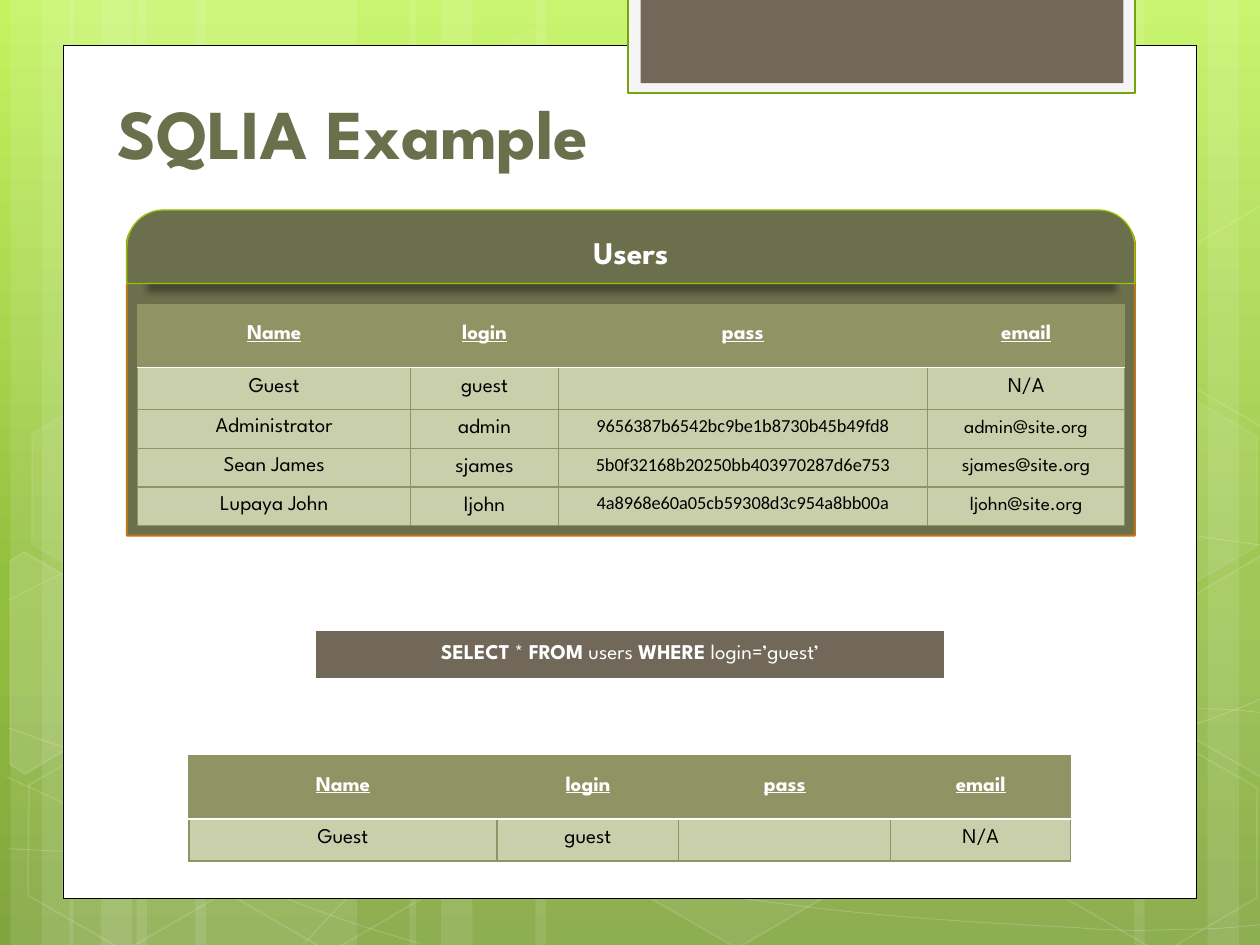
import math

import lxml.etree
import pptx
import pptx.dml.color
import pptx.enum.shapes
import pptx.enum.text
import pptx.oxml.ns
import pptx.util

Pt = pptx.util.Pt
qn = pptx.oxml.ns.qn
SHAPE = pptx.enum.shapes.MSO_SHAPE
ANCHOR = pptx.enum.text.MSO_ANCHOR
CENTER = pptx.enum.text.PP_ALIGN.CENTER

COLORS = {
    "white": "FFFFFF", "black": "000000", "olive": "6C6F4C", "sage": "909465",
    "pale": "C9CFAB", "brown": "71685A", "frame": "F5F5F5", "green": "74A510",
    "lime": "94C600", "orange": "BC7619",
}
BACKGROUND = [(0, "C3F35F"), (62, "93BF3F"), (100, "81A53E")]
FONT = "League Spartan"
HEAD = {"size": Pt(12), "bold": True, "underline": True}
BODY = {"size": Pt(12)}
HASH = {"size": Pt(10.5), "name": "Calibri"}
MAIL = {"size": Pt(11)}


def rgb(name):
    return pptx.dml.color.RGBColor.from_string(COLORS[name])


def sub(parent, tag, **attrs):
    return lxml.etree.SubElement(parent, qn(tag), {k: str(v) for k, v in attrs.items()})


def turn(points, center, degrees):
    cos, sin = math.cos(math.radians(degrees)), math.sin(math.radians(degrees))
    cx, cy = center
    return [(cx + (x - cx) * cos - (y - cy) * sin, cy + (x - cx) * sin + (y - cy) * cos)
            for x, y in points]


class Deck:
    def __init__(self, width, height):
        self.prs = pptx.Presentation()
        self.prs.slide_width, self.prs.slide_height = Pt(width), Pt(height)
        self.s = self.prs.slides.add_slide(self.prs.slide_layouts[5])

    def background(self, stops):
        fill = self.s.background.fill
        fill.gradient()
        fill.gradient_angle = 270
        gs_list = next(self.s.element.iter(qn("a:gsLst")))
        for gs in list(gs_list):
            gs_list.remove(gs)
        for pos, color in stops:
            sub(sub(gs_list, "a:gs", pos=pos * 1000), "a:srgbClr", val=color)

    def paint(self, sp, fill=None, alpha=100, line=None, width=1, line_alpha=100):
        sp.shadow.inherit = False
        if fill:
            sp.fill.solid()
            sp.fill.fore_color.rgb = rgb(fill)
        else:
            sp.fill.background()
        if line:
            sp.line.color.rgb = rgb(line)
            sp.line.width = Pt(width)
        else:
            sp.line.fill.background()
        solid = qn("a:solidFill")
        for where, value in ((solid, alpha), (qn("a:ln") + "/" + solid, line_alpha)):
            node = sp.element.spPr.find(where)
            if node is not None and value < 100:
                sub(node[0], "a:alpha", val=value * 1000)
        return sp

    def shape(self, kind, x, y, w, h, adj=(), rotation=0, **look):
        sp = self.s.shapes.add_shape(kind, Pt(x), Pt(y), Pt(w), Pt(h))
        sp.rotation = rotation
        for i, value in enumerate(adj):
            sp.adjustments[i] = value
        return self.paint(sp, **look)

    def outline(self, points, close=False, **look):
        points = [(Pt(x), Pt(y)) for x, y in points]
        builder = self.s.shapes.build_freeform(*points[0])
        builder.add_line_segments(points[1:], close=close)
        return self.paint(builder.convert_to_shape(), **look)

    def curve(self, points, **look):
        """Draw a chain of cubic curves: a start, then three points per curve."""
        sp = self.outline(points, **look)
        outline = next(sp.element.iter(qn("a:path")))
        lines = outline.findall(qn("a:lnTo"))
        for i in range(0, len(lines), 3):
            cubic = sub(outline, "a:cubicBezTo")
            for line in lines[i:i + 3]:
                cubic.append(line[0])
                outline.remove(line)

    def shadow(self, sp, blur, dist, alpha):
        effects = sp.element.spPr.find(qn("a:effectLst"))
        shadow = sub(effects, "a:outerShdw", blurRad=Pt(blur), dist=Pt(dist), dir=5400000,
                     sx=96000, sy=100000, algn="ctr", rotWithShape=0)
        sub(sub(shadow, "a:srgbClr", val=COLORS["black"]), "a:alpha", val=alpha * 1000)

    def run(self, p, text, color, **style):
        r = p.add_run()
        r.text = text
        r.font.color.rgb = rgb(color)
        for key, value in {"name": FONT, "bold": False, **style}.items():
            setattr(r.font, key, value)

    def title(self, text, x, y, w, h):
        sp = self.s.shapes.title
        self.s.shapes.element.append(sp.element)
        sp.left, sp.top, sp.width, sp.height = Pt(x), Pt(y), Pt(w), Pt(h)
        tf = sp.text_frame
        tf.vertical_anchor = ANCHOR.BOTTOM
        tf.auto_size = pptx.enum.text.MSO_AUTO_SIZE.NONE
        tf.paragraphs[0].alignment = pptx.enum.text.PP_ALIGN.LEFT
        self.run(tf.paragraphs[0], text, "olive", size=Pt(40), bold=True)

    def table(self, x, y, cols, rows):
        table = self.s.shapes.add_table(len(rows), len(cols), Pt(x), Pt(y),
                                        Pt(sum(cols)), Pt(sum(rows))).table
        table.first_row = table.horz_banding = False
        for col, width in zip(table.columns, cols):
            col.width = Pt(width)
        for row, height in zip(table.rows, rows):
            row.height = Pt(height)
        return table

    def cell(self, cell, runs, color, fill, borders, spacing=9.6):
        cell.vertical_anchor = ANCHOR.MIDDLE
        cell.margin_left = cell.margin_right = Pt(5)
        cell.margin_top = cell.margin_bottom = 0
        cell.fill.solid()
        cell.fill.fore_color.rgb = rgb(fill)
        p = cell.text_frame.paragraphs[0]
        p.alignment = CENTER
        p.line_spacing = Pt(spacing) if spacing else None
        for text, style in runs:
            self.run(p, text, color, **style)
        tc_pr = cell.fill._xPr
        for i, (side, (line, width)) in enumerate(zip("LRTB", borders)):
            ln = sub(tc_pr, "a:ln" + side, w=Pt(width))
            sub(sub(ln, "a:solidFill"), "a:srgbClr", val=COLORS[line])
            tc_pr.insert(i, ln)

    def users_table(self, x, y, cols, rows, records):
        table = self.table(x, y, cols, rows)
        grid, divider = ("sage", 0.75), ("white", 1.25)
        for c, name in enumerate(("Name", "login", "pass", "email")):
            self.cell(table.cell(0, c), [(name, HEAD)], "white", "sage",
                      (grid, grid, grid, divider))
        for r, record in enumerate(records, 1):
            styles = (BODY, BODY, HASH, MAIL if "@" in record[3] else BODY)
            for c, (text, style) in enumerate(zip(record, styles)):
                spacing = None if c == 1 and r > 1 else 9.6
                self.cell(table.cell(r, c), [(text, style)] if text else [], "black", "pale",
                          (grid, grid, divider if r == 1 else grid, grid), spacing)


STRIPES = [(78, 126), (6, 36), (24, 60), (111.6, 126), (39.6, 36), (57.6, 60),
           (528, 126), (690, 36), (648, 60), (306, 222), (234, 36), (252, 60)]
CURVES = [
    [(5, 485), (44, 487), (83, 489), (137, 488), (191, 487), (258, 486), (330, 479),
     (402, 472), (504, 458), (570, 444), (636, 431), (703, 409), (725, 397)],
    [(5, 343), (26, 332), (47, 321), (87, 310), (128, 300), (186, 284), (250, 279),
     (314, 274), (392, 273), (471, 279), (550, 284), (682, 307), (725, 312)],
    [(4, 444), (91, 484), (178, 523), (240, 539)],
    [(5, 416), (27, 424), (50, 432), (92, 444), (134, 454), (197, 472), (257, 485),
     (317, 497), (392, 510), (452, 517), (512, 525), (576, 528), (614, 530),
     (652, 533), (662, 531), (680, 531), (699, 531), (712, 529), (725, 528)],
    [(174, 539), (187, 525), (200, 510), (217, 498), (235, 485), (259, 470), (279, 460),
     (300, 450), (312, 446), (338, 438), (364, 431), (413, 421), (438, 416), (464, 411),
     (467, 411), (490, 410), (512, 408), (547, 405), (572, 405), (597, 404), (638, 405),
     (638, 405), (654, 405), (670, 405), (686, 405), (699, 405), (711, 406), (718, 407),
     (724, 407), (722, 407), (724, 408)],
]
# Left, top, fill opacity, line opacity
HEXAGONS = [(240.5, 26, 4, 8), (358, 424, 6, 12), (8, 425.5, 0, 12), (10, 224.6, 7, 8),
            (125.3, 426.2, 0, 12), (542.2, 326.2, 10, 12), (600.5, 427, 0, 12),
            (600.5, 226, 7, 8)]
# Fill opacity, center, corners
CUT_HEXAGONS = [
    (10, (25.9, 385.2), [(5.8, 320.4), (13.7, 315.4), (69.1, 347), (68.4, 410.4),
                         (14.4, 442.1), (5.8, 437)]),
    (4, (709.2, 374.4), [(666.7, 349.2), (720.7, 317.5), (726.5, 321.1), (726.5, 441.4),
                         (721.4, 444.2), (666.7, 412.6)]),
    (0, (709.2, 173.5), [(666.7, 149), (720.7, 117.4), (727.2, 121), (726.5, 241.2),
                         (721.4, 244.1), (666.7, 212.4)]),
]
GUEST = ("Guest", "guest", "", "N/A")
USERS = [
    GUEST,
    ("Administrator", "admin", "9656387b6542bc9be1b8730b45b49fd8", "admin@site.org"),
    ("Sean James", "sjames", "5b0f32168b20250bb403970287d6e753", "sjames@site.org"),
    ("Lupaya John", "ljohn", "4a8968e60a05cb59308d3c954a8bb00a", "ljohn@site.org"),
]
QUERY = [("SELECT", True), (" * ", False), ("FROM", True), (" users ", False),
         ("WHERE", True), (" login=’guest’", False)]


def main():
    deck = Deck(720, 540)

    # Background decoration
    deck.background(BACKGROUND)
    for i, (x, w) in enumerate(STRIPES):
        deck.shape(SHAPE.RECTANGLE, x, 0, w, 540, rotation=180 if 6 <= i < 9 else 0,
                   fill="white", alpha=10)
    for points in CURVES:
        deck.curve(points, line="white", width=0.5, line_alpha=20)
    for x, y, alpha, line_alpha in HEXAGONS:
        deck.shape(SHAPE.HEXAGON, x, y, 126, 109.4, adj=(0.285, 1.155), rotation=30,
                   fill="white" if alpha else None, alpha=alpha, line="white",
                   line_alpha=line_alpha)
    for alpha, center, points in CUT_HEXAGONS:
        sp = deck.outline(turn(points, center, -30), close=True, alpha=alpha,
                          fill="white" if alpha else None, line="white", line_alpha=12)
        sp.rotation = 30

    # Page panel, top tab and title
    deck.shape(SHAPE.RECTANGLE, 36, 26, 648, 487.2, fill="white", line="black", width=0.5)
    deck.shape(SHAPE.RECTANGLE, 359, -1.5, 289.5, 54.7, fill="frame", line="green", width=1.25)
    deck.shape(SHAPE.RECTANGLE, 366, -1.5, 276, 49, fill="brown")
    deck.title("SQLIA Example", 60, 30, 561, 73)

    # Users card
    deck.shape(SHAPE.ROUND_2_SAME_RECTANGLE, 72.5, 126, 576, 180, adj=(0.077, 0),
               fill="olive", line="orange", width=1.25)
    header = deck.shape(SHAPE.ROUND_2_SAME_RECTANGLE, 72.5, 120, 576, 42, adj=(0.5, 0),
                        fill="olive", line="lime", width=0.75)
    deck.shadow(header, blur=3.5, dist=4, alpha=34)
    header.text_frame.vertical_anchor = ANCHOR.MIDDLE
    p = header.text_frame.paragraphs[0]
    p.alignment = CENTER
    deck.run(p, "Users", "white", size=Pt(18), bold=True)

    # Query, full table and result
    query = deck.table(180, 360, [360], [28.5])
    edge = ("white", 1)
    deck.cell(query.cell(0, 0), [(text, {"size": Pt(12), "bold": bold}) for text, bold in QUERY],
              "white", "brown", (edge, edge, edge, ("white", 3)), spacing=10)
    deck.users_table(78.6, 174, [156.2, 84.2, 211, 112.8], [36, 24] + [22.15] * 3, USERS)
    deck.users_table(108, 432, [176, 104, 121, 103], [36, 24], [GUEST])

    deck.prs.save("out.pptx")


if __name__ == "__main__":
    main()
